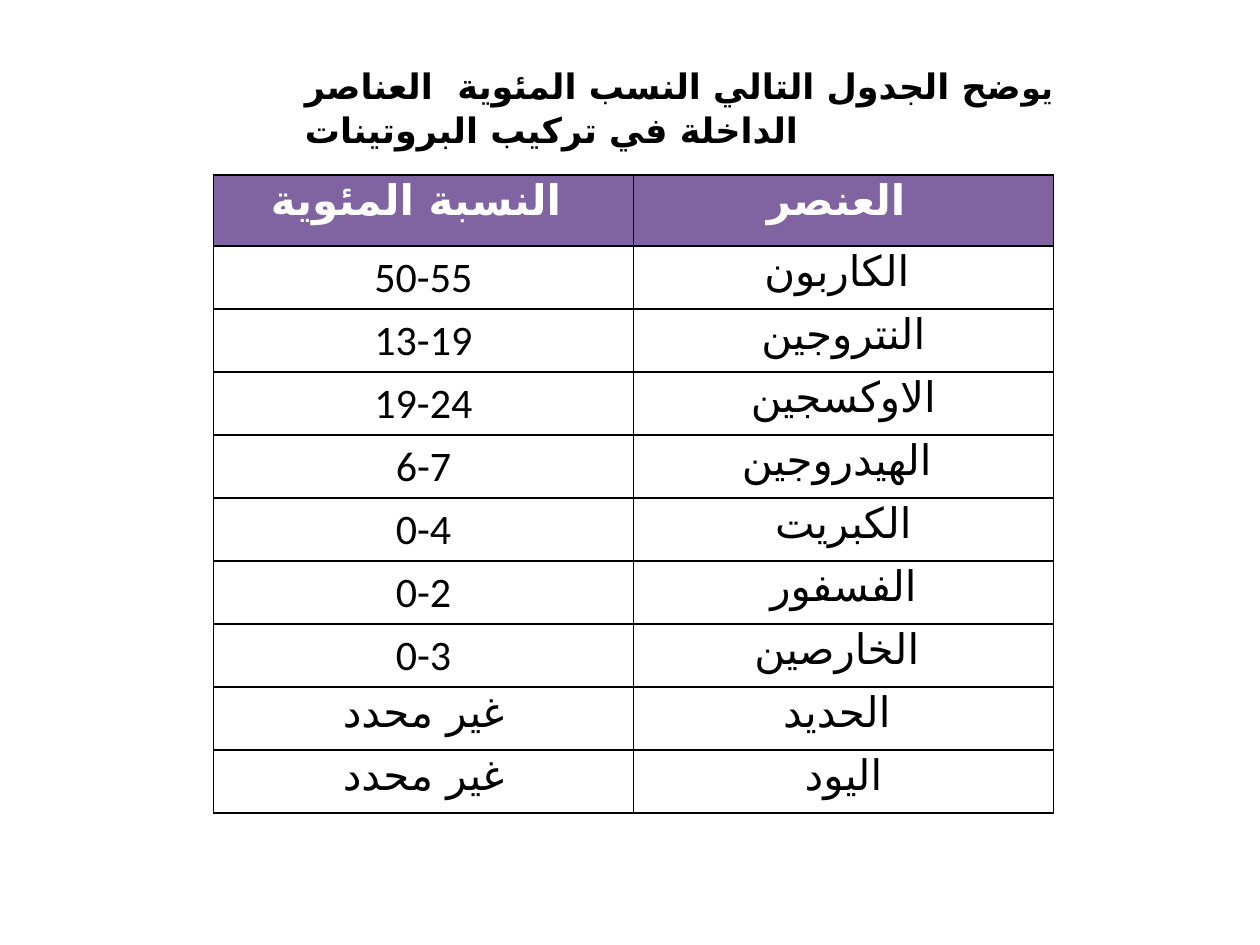
from typing import NamedTuple

from lxml.etree import SubElement
from pptx import Presentation
from pptx.dml.color import RGBColor as RGB
from pptx.enum.text import MSO_ANCHOR as ANCHOR, MSO_AUTO_SIZE as FIT, PP_ALIGN as ALIGN
from pptx.oxml.ns import qn
from pptx.util import Pt

COLORS = {"text": "000000", "header": "8064A2", "header_text": "FFFFFF",
          "body": "FFFFFF", "border": "000000"}
FONT = "Calibri"
ARABIC_FONT = "DejaVu Sans"


class Element(NamedTuple):
    share: str
    name: str


HEADER = Element("النسبة المئوية ", "العنصر ")
ELEMENTS = [
    Element("50-55", "الكاربون "),
    Element("13-19", "النتروجين"),
    Element("19-24", "الاوكسجين"),
    Element("6-7", "الهيدروجين "),
    Element("0-4", "الكبريت"),
    Element("0-2", "الفسفور"),
    Element("0-3", "الخارصين "),
    Element("غير محدد", "الحديد "),
    Element("غير محدد", "اليود"),
]


def add_text(p, text: str, *, size: float, color: str = "text",
             bold: bool = False, align=ALIGN.LEFT) -> None:
    p.alignment = align
    r = p.add_run()
    r.text = text
    r.font.name = FONT
    r.font.size = Pt(size)
    r.font.bold = bold
    r.font.color.rgb = RGB.from_string(COLORS[color])
    SubElement(r.font._element, qn("a:cs"), typeface=ARABIC_FONT)


def set_borders(cell, color: str, width: float) -> None:
    tc_pr = cell._tc.get_or_add_tcPr()
    for side in ("lnL", "lnR", "lnT", "lnB"):
        ln = SubElement(tc_pr, qn(f"a:{side}"), w=str(Pt(width)))
        fill = SubElement(ln, qn("a:solidFill"))
        SubElement(fill, qn("a:srgbClr"), val=COLORS[color])


def fill_row(table, row: int, element: Element, *, fill: str, **text_format) -> None:
    for col, text in enumerate(element):
        cell = table.cell(row, col)
        is_range = text[0].isdigit()
        cell.margin_top = Pt(3.6 if is_range else 1)
        cell.margin_bottom = Pt(2.5)
        set_borders(cell, "border", 1)
        cell.fill.solid()
        cell.fill.fore_color.rgb = RGB.from_string(COLORS[fill])
        add_text(cell.text_frame.paragraphs[0], text, size=24,
                 align=ALIGN.CENTER, **text_format)


def add_title(s) -> None:
    title = s.shapes.title
    title.left, title.top, title.width, title.height = Pt(167), Pt(32), Pt(493), Pt(55.5)
    tf = title.text_frame
    tf.word_wrap = True
    tf.auto_size = FIT.NONE
    tf.vertical_anchor = ANCHOR.TOP
    p = tf.paragraphs[0]
    p.line_spacing = 1.05
    add_text(p, "يو", size=18, bold=True)
    add_text(p, "ضح الجدول التالي النسب المئوية  العناصر الداخلة في تركيب البروتينات",
             size=20, bold=True)


def add_elements_table(s) -> None:
    header_height, row_height = 40.7, 36
    height = header_height + row_height * len(ELEMENTS)
    table = s.shapes.add_table(len(ELEMENTS) + 1, 2, Pt(122), Pt(100),
                               Pt(480), Pt(height)).table
    for row in table.rows:
        row.height = Pt(row_height)
    table.rows[0].height = Pt(header_height)
    fill_row(table, 0, HEADER, fill="header", color="header_text", bold=True)
    for i, element in enumerate(ELEMENTS, start=1):
        fill_row(table, i, element, fill="body")


def main() -> None:
    prs = Presentation()
    prs.slide_width, prs.slide_height = Pt(720), Pt(540)
    s = prs.slides.add_slide(prs.slide_layouts[5])
    add_title(s)
    add_elements_table(s)
    prs.save("out.pptx")


if __name__ == "__main__":
    main()
